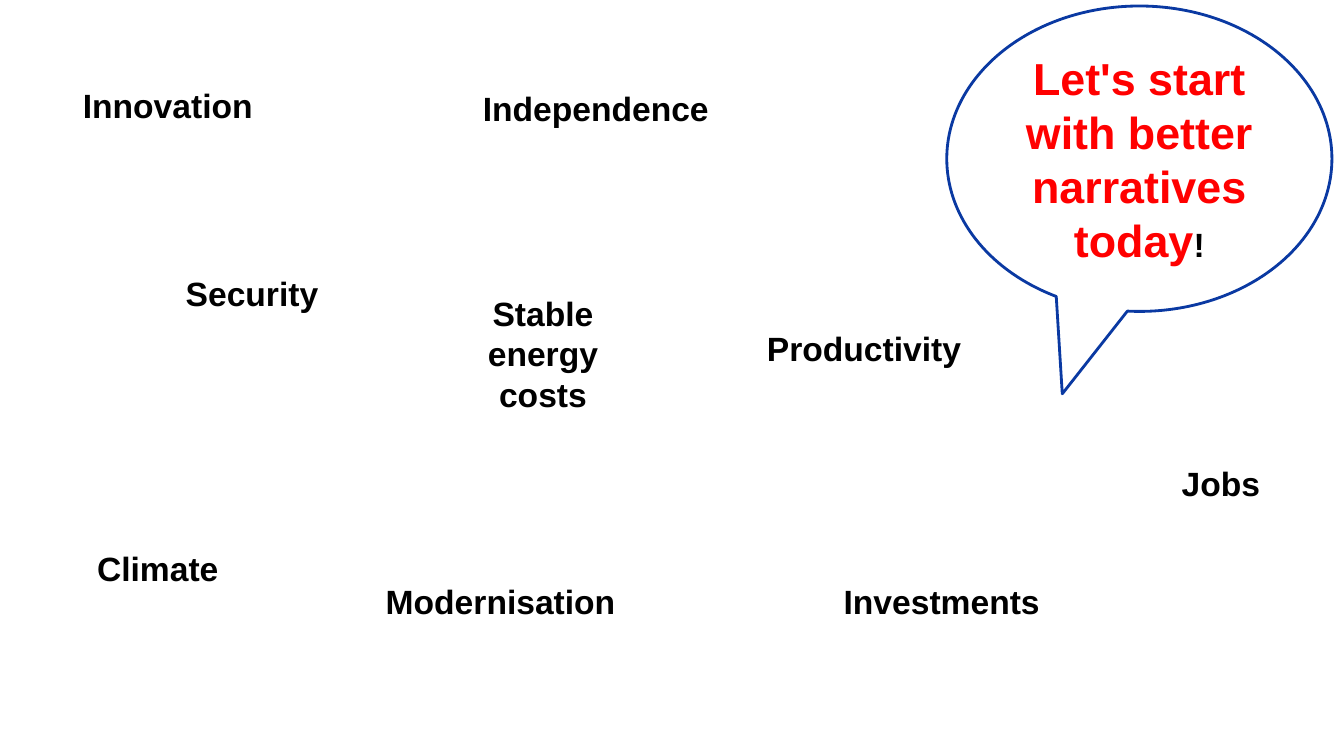
from pptx import Presentation
from pptx.dml.color import RGBColor
from pptx.enum.shapes import MSO_SHAPE
from pptx.enum.text import MSO_ANCHOR, PP_ALIGN
from pptx.util import Inches, Pt

CALLOUT = MSO_SHAPE.OVAL_CALLOUT
MIDDLE = MSO_ANCHOR.MIDDLE
CENTER = PP_ALIGN.CENTER

COLORS = {"white": "FFFFFF", "black": "000000", "red": "FF0000", "blue": "0A39A2"}

prs = Presentation()
prs.slide_width = Inches(13.33)
prs.slide_height = Inches(7.5)
s = prs.slides.add_slide(prs.slide_layouts[6])


def add_run(p, text, size=24, color="black"):
    r = p.add_run()
    r.text = text
    r.font.name = "Arial"
    r.font.size = Pt(size)
    r.font.bold = True
    r.font.color.rgb = RGBColor.from_string(COLORS[color])


def add_bubble(left, top, width, height, tail):
    sp = s.shapes.add_shape(CALLOUT, Inches(left), Inches(top), Inches(width), Inches(height))
    sp.shadow.inherit = False
    sp.adjustments[0], sp.adjustments[1] = tail
    sp.fill.solid()
    sp.fill.fore_color.rgb = RGBColor.from_string(COLORS["white"])
    sp.line.fill.background()
    tf = sp.text_frame
    tf.word_wrap = True
    tf.vertical_anchor = MIDDLE
    p = tf.paragraphs[0]
    p.alignment = CENTER
    return sp, p


LEFT_TAIL = (-0.2, 0.77)
RIGHT_TAIL = (0.2, 0.77)

appeal, p = add_bubble(9.39, 0.06, 3.82, 3.03, LEFT_TAIL)
appeal.line.color.rgb = RGBColor.from_string(COLORS["blue"])
appeal.line.width = Pt(2)
add_run(p, "Let's start with better narratives today", size=32, color="red")
add_run(p, "!")

narratives = [
    ("Innovation", 0.3, 0.31, 2.73, 1.47, LEFT_TAIL),
    ("Investments", 7.78, 5.05, 3.12, 1.83, RIGHT_TAIL),
    ("Modernisation", 3.21, 5.16, 3.51, 1.6, (0.09, 0.8)),
    ("Independence", 3.94, 0.14, 3.94, 1.87, (0.11, 0.87)),
    ("Security", 1.4, 1.96, 2.2, 1.89, (-0.1, 0.78)),
    ("Climate", 0.41, 4.63, 2.31, 2.01, LEFT_TAIL),
    ("Productivity", 7.05, 2.48, 3.04, 1.95, LEFT_TAIL),
    ("Jobs", 11.01, 3.85, 2.2, 1.89, LEFT_TAIL),
    ("Stable energy costs", 4.14, 2.53, 2.49, 1.95, RIGHT_TAIL),
]
for text, left, top, width, height, tail in narratives:
    sp, p = add_bubble(left, top, width, height, tail)
    add_run(p, text)

prs.save("out.pptx")
